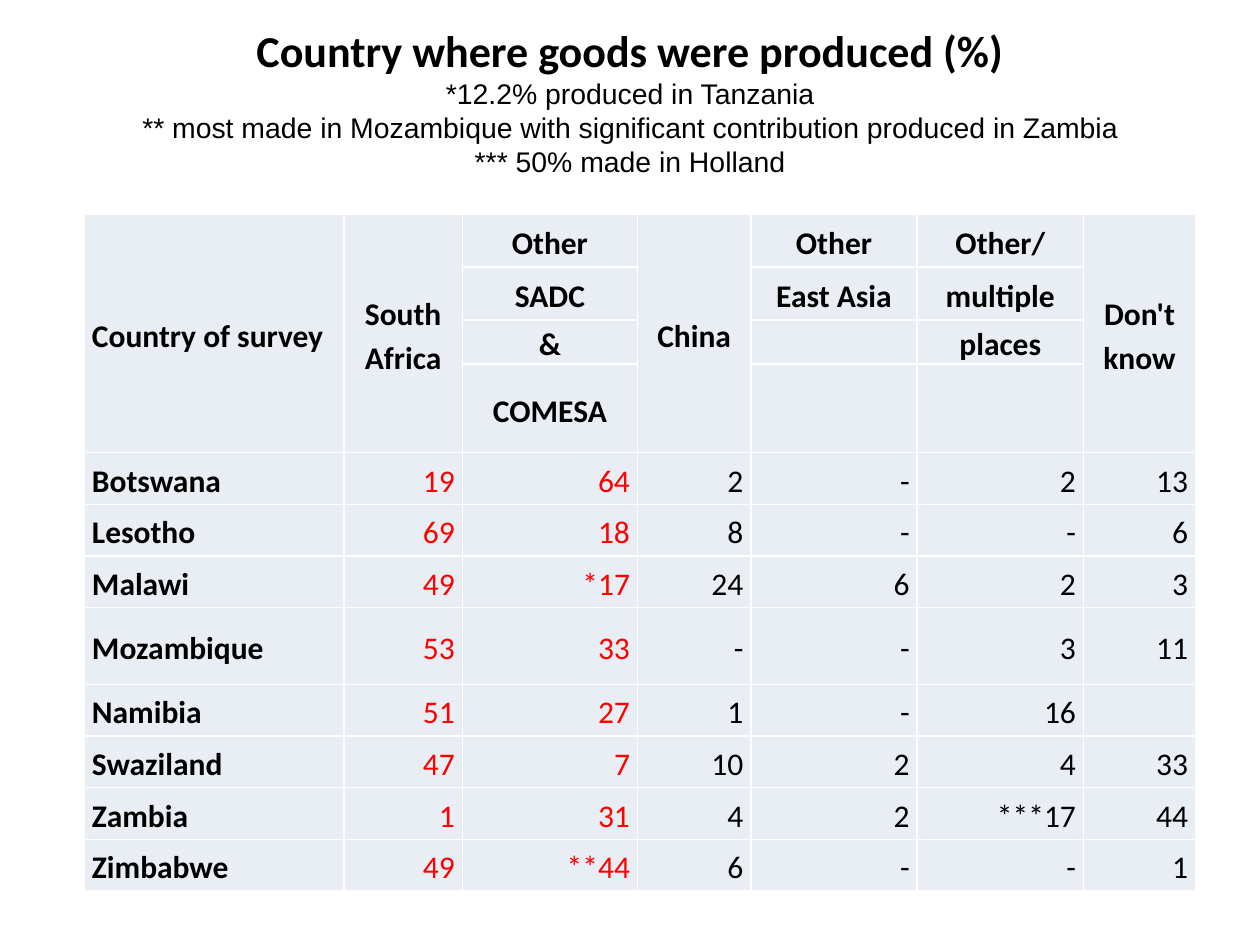
from dataclasses import dataclass

from lxml import etree
from pptx import Presentation
from pptx.dml.color import RGBColor
from pptx.enum.text import MSO_ANCHOR, MSO_AUTO_SIZE, PP_ALIGN
from pptx.oxml.ns import qn
from pptx.slide import Slide
from pptx.table import Table, _Cell
from pptx.text.text import _Paragraph
from pptx.util import Inches, Pt

LEFT, MID, RIGHT = PP_ALIGN.LEFT, PP_ALIGN.CENTER, PP_ALIGN.RIGHT
MIDDLE = MSO_ANCHOR.MIDDLE
FIXED = MSO_AUTO_SIZE.NONE
TITLE_ONLY = 5

COLORS = {"text": "000000", "red": "FF0000", "cell": "E9EDF4", "rule": "FFFFFF"}


@dataclass(frozen=True)
class Style:
    size: float
    font: str = "Calibri"
    bold: bool = False
    color: str = "text"


@dataclass(frozen=True)
class Column:
    head: tuple[str, ...]
    width: float
    color: str = "text"
    merged: bool = False


HEADING = Style(25.2, bold=True)
NOTE = Style(16.2, "Arial")
LABEL = Style(18, bold=True)

NOTES = (
    "*12.2% produced in Tanzania",
    "** most made in Mozambique with significant contribution produced in Zambia",
    "*** 50% made in Holland",
)
COLUMNS = (
    Column(("Country of survey",), 2.06, merged=True),
    Column(("South Africa",), 0.94, "red", merged=True),
    Column(("Other", "SADC", "&", "COMESA"), 1.39, "red"),
    Column(("China",), 0.9, merged=True),
    Column(("Other", "East Asia"), 1.32),
    Column(("Other/", "multiple", "places"), 1.32),
    Column(("Don't know",), 0.89, merged=True),
)
HEAD_ROWS = (0.42, 0.42, 0.29, 0.42)
ROW, TALL_ROW = 0.41, 0.61
DATA = (
    ("Botswana", "19", "64", "2", "-", "2", "13"),
    ("Lesotho", "69", "18", "8", "-", "-", "6"),
    ("Malawi", "49", "*17", "24", "6", "2", "3"),
    ("Mozambique", "53", "33", "-", "-", "3", "11"),
    ("Namibia", "51", "27", "1", "-", "16", ""),
    ("Swaziland", "47", "7", "10", "2", "4", "33"),
    ("Zambia", "1", "31", "4", "2", "***17", "44"),
    ("Zimbabwe", "49", "**44", "6", "-", "-", "1"),
)


def add_run(para: _Paragraph, text: str, style: Style) -> None:
    run = para.add_run()
    run.text = text
    font = run.font
    font.size, font.name, font.bold = Pt(style.size), style.font, style.bold
    font.color.rgb = RGBColor.from_string(COLORS[style.color])


def add_title(slide: Slide) -> None:
    title = slide.shapes.title
    title.left, title.top = Inches(0.5), Inches(0.3)
    title.width, title.height = Inches(9), Inches(1.25)
    frame = title.text_frame
    frame.word_wrap, frame.auto_size = True, FIXED
    frame.vertical_anchor = MIDDLE
    frame.margin_bottom = Inches(0.3)
    para = frame.paragraphs[0]
    para.alignment = MID
    add_run(para, "Country where goods were produced (%)", HEADING)
    for note in NOTES:
        para.add_line_break()
        add_run(para, note, NOTE)


def dress(cell: _Cell) -> None:
    """Give a cell its rules, fill, margins and anchor."""
    props = cell._tc.get_or_add_tcPr()
    for side in ("a:lnL", "a:lnR", "a:lnT", "a:lnB"):
        line = etree.SubElement(props, qn(side), w=str(Pt(1)))
        fill = etree.SubElement(line, qn("a:solidFill"))
        etree.SubElement(fill, qn("a:srgbClr"), val=COLORS["rule"])
    cell.fill.solid()
    cell.fill.fore_color.rgb = RGBColor.from_string(COLORS["cell"])
    cell.margin_left = cell.margin_right = Inches(0.06)
    cell.margin_top = cell.margin_bottom = 0
    cell.vertical_anchor = MIDDLE


def write(cell: _Cell, text: str, align: PP_ALIGN, style: Style) -> None:
    para = cell.text_frame.paragraphs[0]
    para.alignment, para.line_spacing = align, 1.15
    if text:
        add_run(para, text, style)


def fill_head(table: Table) -> None:
    for x, col in enumerate(COLUMNS):
        if col.merged:
            table.cell(0, x).merge(table.cell(len(HEAD_ROWS) - 1, x))
        for y, text in enumerate(col.head):
            write(table.cell(y, x), text, MID if x else LEFT, LABEL)


def fill_body(table: Table) -> None:
    for y, row in enumerate(DATA, len(HEAD_ROWS)):
        for x, (text, col) in enumerate(zip(row, COLUMNS)):
            style = Style(18, color=col.color) if x else LABEL
            write(table.cell(y, x), text, RIGHT if x else LEFT, style)


def add_grid(slide: Slide) -> None:
    rows = [*HEAD_ROWS, *(TALL_ROW if row[0] == "Mozambique" else ROW for row in DATA)]
    width = sum(col.width for col in COLUMNS)
    table = slide.shapes.add_table(
        len(rows), len(COLUMNS), Inches(0.67), Inches(1.7), Inches(width), Inches(sum(rows))
    ).table
    table.first_row = table.horz_banding = False
    for part, col in zip(table.columns, COLUMNS):
        part.width = Inches(col.width)
    for part, height in zip(table.rows, rows):
        part.height = Inches(height)
    for cell in table.iter_cells():
        dress(cell)
    fill_head(table)
    fill_body(table)


def main() -> None:
    deck = Presentation()
    deck.slide_width, deck.slide_height = Inches(10), Inches(7.5)
    slide = deck.slides.add_slide(deck.slide_layouts[TITLE_ONLY])
    add_title(slide)
    add_grid(slide)
    deck.save("out.pptx")


if __name__ == "__main__":
    main()
